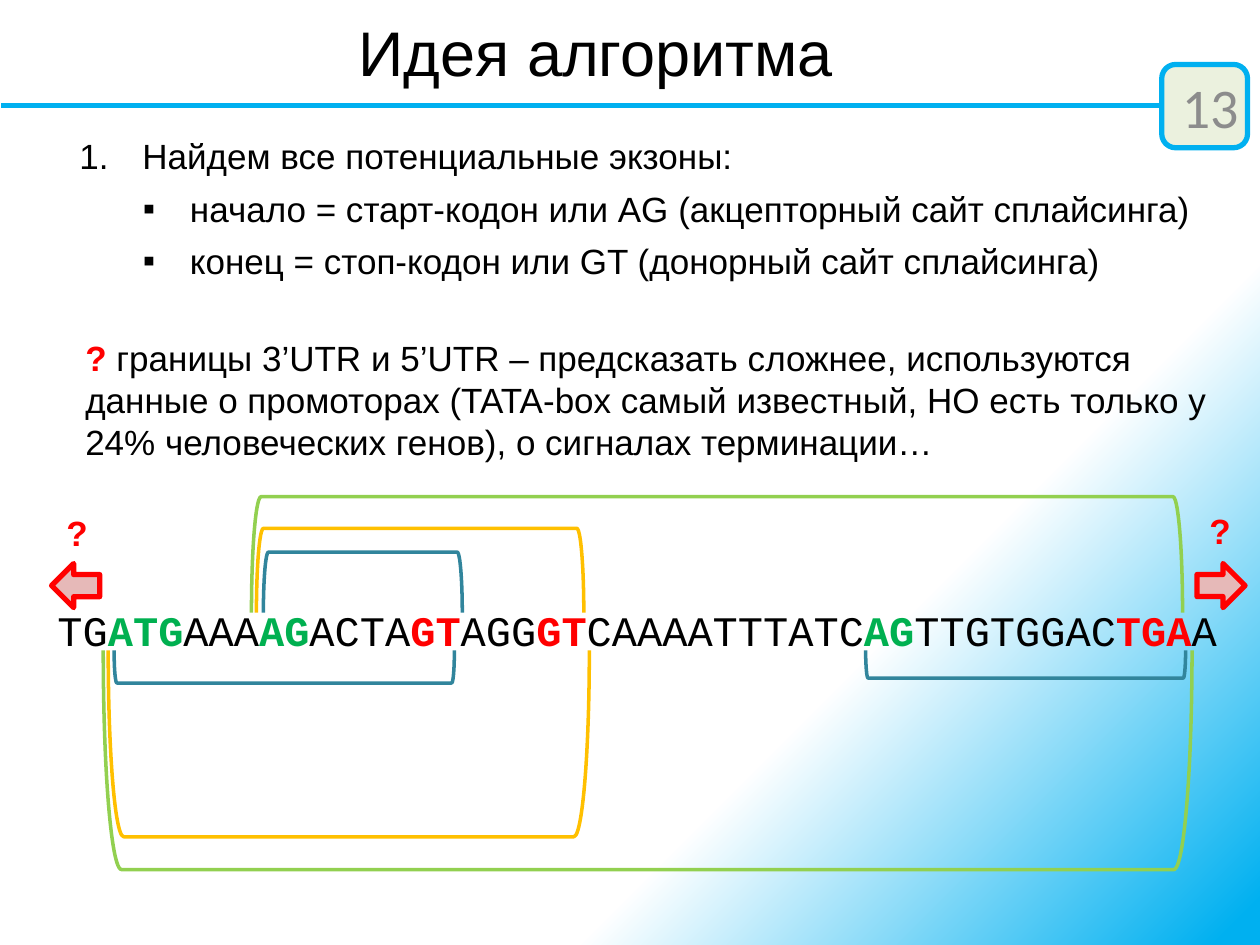
from lxml.etree import SubElement
from pptx import Presentation
from pptx.dml.color import RGBColor
from pptx.enum.shapes import MSO_CONNECTOR, MSO_SHAPE
from pptx.enum.text import MSO_ANCHOR, MSO_AUTO_SIZE, PP_ALIGN
from pptx.oxml.ns import qn
from pptx.util import Cm, Pt

BLACK = RGBColor(0x00, 0x00, 0x00)
WHITE = RGBColor(0xFF, 0xFF, 0xFF)
SKY = RGBColor(0x00, 0xB0, 0xF0)
RED = RGBColor(0xFF, 0x00, 0x00)
GREEN = RGBColor(0x00, 0xB0, 0x50)
LIME = RGBColor(0x92, 0xD0, 0x50)
AMBER = RGBColor(0xFF, 0xC0, 0x00)
TEAL = RGBColor(0x31, 0x85, 0x9C)
PINK = RGBColor(0xE6, 0xB9, 0xB8)
CREAM = RGBColor(0xEB, 0xF1, 0xDE)
GRAY = RGBColor(0x8C, 0x8C, 0x8C)

TITLE_FONT = {"name": "Arial", "size": Pt(36), "bold": False}
BODY_FONT = {"name": "Arial", "size": Pt(20)}
SEQUENCE_FONT = {"name": "Courier New", "size": Pt(24)}
NUMBER_FONT = {"name": "Calibri", "size": Pt(32)}

CRITERIA = [
    (0, "Найдем все потенциальные экзоны:"),
    (1, "начало = старт-кодон или AG (акцепторный сайт сплайсинга)"),
    (1, "конец = стоп-кодон или GT (донорный сайт сплайсинга)"),
]
LIST_LEVELS = [
    (1.27, -1.27, "buAutoNum", {"type": "arabicPeriod"}),
    (2.23, -0.95, "buChar", {"char": "▪"}),
]
UTR_NOTE = [
    ("?", RED),
    (" границы 3’UTR и 5’UTR – предсказать сложнее, используются данные о промоторах "
     "(TATA-box самый известный, НО есть только у 24% человеческих генов), "
     "о сигналах терминации…", BLACK),
]
SEQUENCE = [
    ("TG", BLACK), ("ATG", GREEN), ("AAA", BLACK), ("AG", GREEN), ("ACTA", BLACK),
    ("GT", RED), ("AGG", BLACK), ("GT", RED), ("CAAAATTTATC", BLACK), ("AG", GREEN),
    ("TTGTGGAC", BLACK), ("TGA", RED), ("A", BLACK),
]
UPPER_EXONS = [(4.16, 18.77, 2.34, LIME), (4.26, 6.6, 1.7, AMBER), (4.4, 4.01, 1.22, TEAL)]
LOWER_EXONS = [(1.39, 6.86, 0.66, TEAL), (1.27, 9.7, 3.76, AMBER),
               (16.54, 6.45, 0.56, TEAL), (1.17, 21.95, 4.42, LIME)]


def set_format(target, values):
    """Set each named attribute of the target."""
    for name, value in values.items():
        setattr(target, name, value)


def add_runs(paragraph, runs, font_values):
    """Append coloured runs, bold wherever the colour is not black or gray."""
    for text, color in runs:
        run = paragraph.add_run()
        run.text = text
        set_format(run.font, {**font_values, "bold": color not in (BLACK, GRAY)})
        run.font.color.rgb = color


def add_text(slide, left, top, width, height, runs=(), font_values=BODY_FONT):
    """Add a wrapping text box and return its text frame."""
    text_box = slide.shapes.add_textbox(Cm(left), Cm(top), Cm(width), Cm(height))
    text_frame = text_box.text_frame
    text_frame.word_wrap = True
    add_runs(text_frame.paragraphs[0], runs, font_values)
    return text_frame


def add_outline(slide, kind, left, top, width, height, color, weight, fill=None, rotation=0):
    """Add an outlined preset shape, filled only when a fill is given."""
    shape = slide.shapes.add_shape(kind, Cm(left), Cm(top), Cm(width), Cm(height))
    set_format(shape, {"rotation": rotation})
    shape.shadow.inherit = False
    set_format(shape.line, {"width": Pt(weight)})
    shape.line.color.rgb = color
    if fill is None:
        shape.fill.background()
    else:
        shape.fill.solid()
        shape.fill.fore_color.rgb = fill


def paint_background(slide):
    """Fill the background with a gradient spreading from the top left corner."""
    fill = slide.background.fill
    fill.gradient()
    for stop, color, position in zip(fill.gradient_stops, (WHITE, SKY), (0.69, 0.98)):
        stop.color.rgb = color
        stop.position = position
    gradient = slide.background._cSld.find(".//" + qn("a:gradFill"))
    gradient.remove(gradient.find(qn("a:lin")))
    circle = SubElement(gradient, qn("a:path"), {"path": "circle"})
    SubElement(circle, qn("a:fillToRect"), {"r": "100000", "b": "100000"})


def add_header(slide, left, top, width):
    """Place the title, the rule below it and the page number badge."""
    rule_y = Cm(top + 2.13)
    rule = slide.shapes.add_connector(
        MSO_CONNECTOR.STRAIGHT, Cm(left + width - 0.46), rule_y, Cm(left + 0.03), rule_y)
    rule.line.color.rgb = SKY
    rule.line.width = Pt(3)
    SubElement(rule._element.spPr, qn("a:effectLst"))
    add_outline(slide, MSO_SHAPE.ROUNDED_RECTANGLE, left + width - 1.98, top + 1.3,
                1.73, 1.68, SKY, 3, CREAM)
    number = add_text(slide, left + width - 6.1, top + 1.63, 5.92, 1.02,
                      [("13", GRAY)], NUMBER_FONT)
    number.vertical_anchor = MSO_ANCHOR.MIDDLE
    number.paragraphs[0].alignment = PP_ALIGN.RIGHT

    title = slide.shapes.title
    set_format(title, {"left": Cm(left + 0.51), "top": Cm(top + 0.05),
                       "width": Cm(width - 2.39), "height": Cm(1.98)})
    set_format(title.text_frame, {"vertical_anchor": MSO_ANCHOR.MIDDLE,
                                  "auto_size": MSO_AUTO_SIZE.NONE})
    paragraph = title.text_frame.paragraphs[0]
    paragraph.alignment = PP_ALIGN.CENTER
    add_runs(paragraph, [("Идея алгоритма", BLACK)], TITLE_FONT)


def add_criteria(slide, left, top, width):
    """Place the numbered rule with its bullets and the note on UTR borders."""
    text_frame = add_text(slide, left, top, width, 3.25)
    for index, (level, text) in enumerate(CRITERIA):
        paragraph = text_frame.add_paragraph() if index else text_frame.paragraphs[0]
        margin, indent, bullet, attributes = LIST_LEVELS[level]
        properties = paragraph._p.get_or_add_pPr()
        properties.set("marL", str(Cm(margin)))
        properties.set("indent", str(Cm(indent)))
        SubElement(properties, qn("a:buFont"), {"typeface": "Arial"})
        SubElement(properties, qn("a:" + bullet), attributes)
        set_format(paragraph, {"level": level, "space_after": Pt(6)})
        add_runs(paragraph, [(text, BLACK)], BODY_FONT)
    add_text(slide, left + 0.12, top + 4.06, width, 2.82, UTR_NOTE)


def add_sequence(slide, left, top, width):
    """Place the nucleotide sequence, exon brackets and open-end arrows."""
    add_text(slide, left, top, width, 1.27, SEQUENCE, SEQUENCE_FONT)
    for exons, edge, side, rotation in ((UPPER_EXONS, 0.28, -1, 270),
                                        (LOWER_EXONS, 1.04, 1, 90)):
        for start, span, depth, color in exons:
            center_x = left + start + span / 2
            center_y = top + edge + side * depth / 2
            add_outline(slide, MSO_SHAPE.RIGHT_BRACKET, center_x - depth / 2,
                        center_y - span / 2, depth, span, color, 2, rotation=rotation)
    for mark_x, mark_y, arrow_x, rotation in ((0.18, -1.88, 0.13, 180),
                                              (23.22, -1.93, 23.22, 0)):
        add_text(slide, left + mark_x, top + mark_y, 1.07, 1.12, [("?", RED)])
        add_outline(slide, MSO_SHAPE.RIGHT_ARROW, left + arrow_x, top - 0.71,
                    0.97, 0.89, RED, 3, PINK, rotation)


def main():
    """Build and save the slide."""
    presentation = Presentation()
    set_format(presentation, {"slide_width": Cm(25.4), "slide_height": Cm(19.05)})
    slide = presentation.slides.add_slide(presentation.slide_layouts.get_by_name("Title Only"))
    paint_background(slide)
    add_header(slide, 0, 0, 25.4)
    add_criteria(slide, 1.35, 2.59, 23.5)
    add_sequence(slide, 0.91, 12.07, 24.1)
    presentation.save("out.pptx")


if __name__ == "__main__":
    main()
